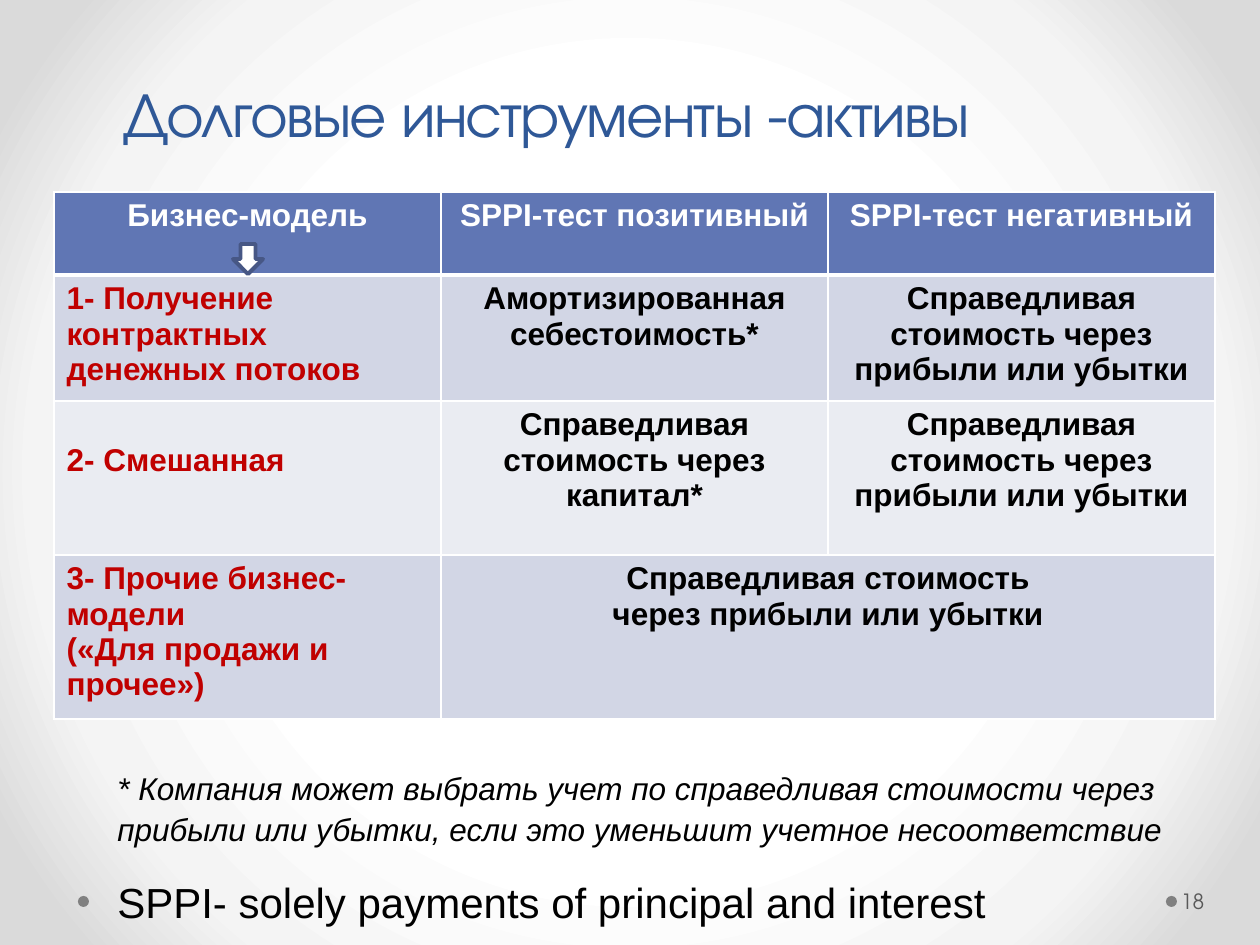
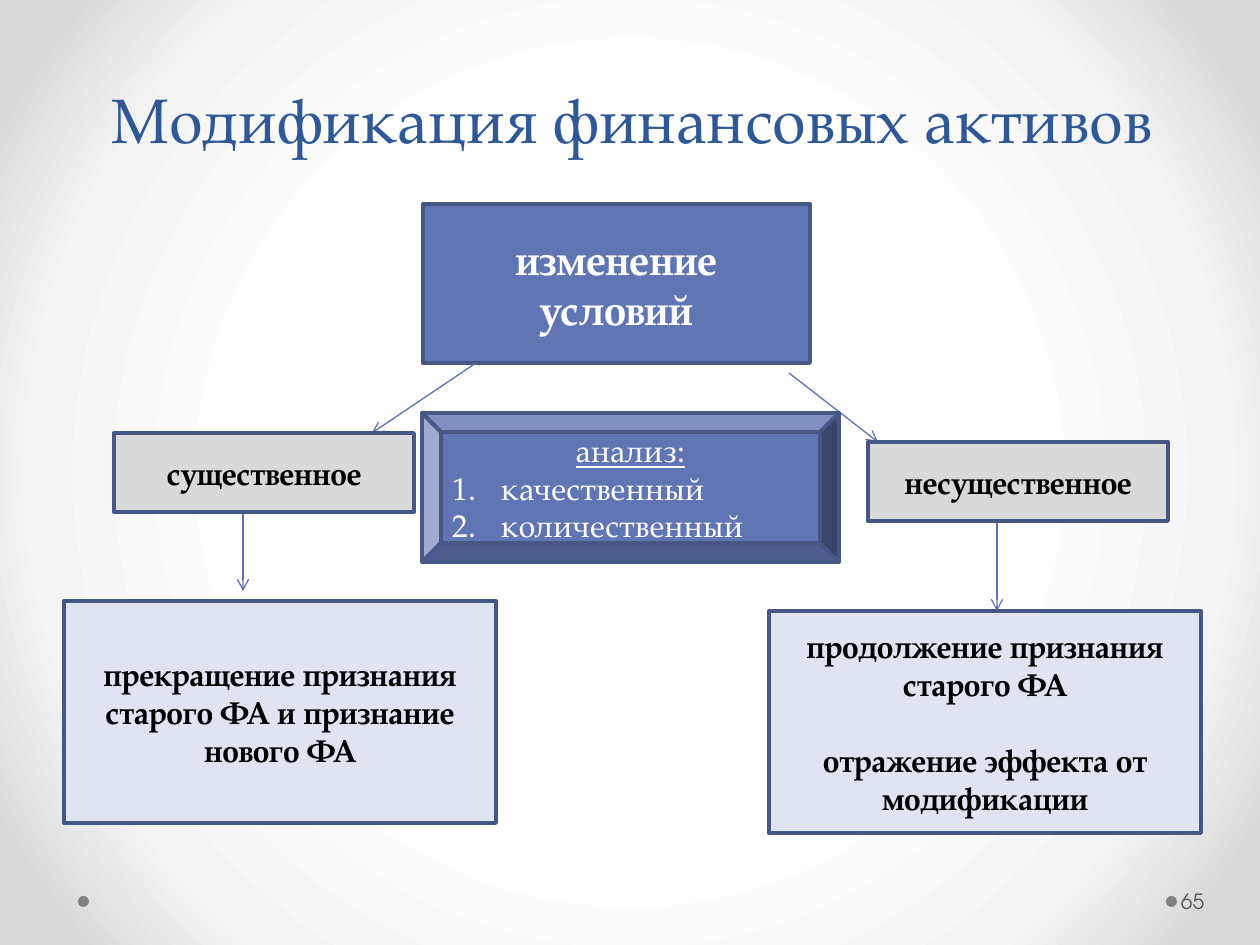
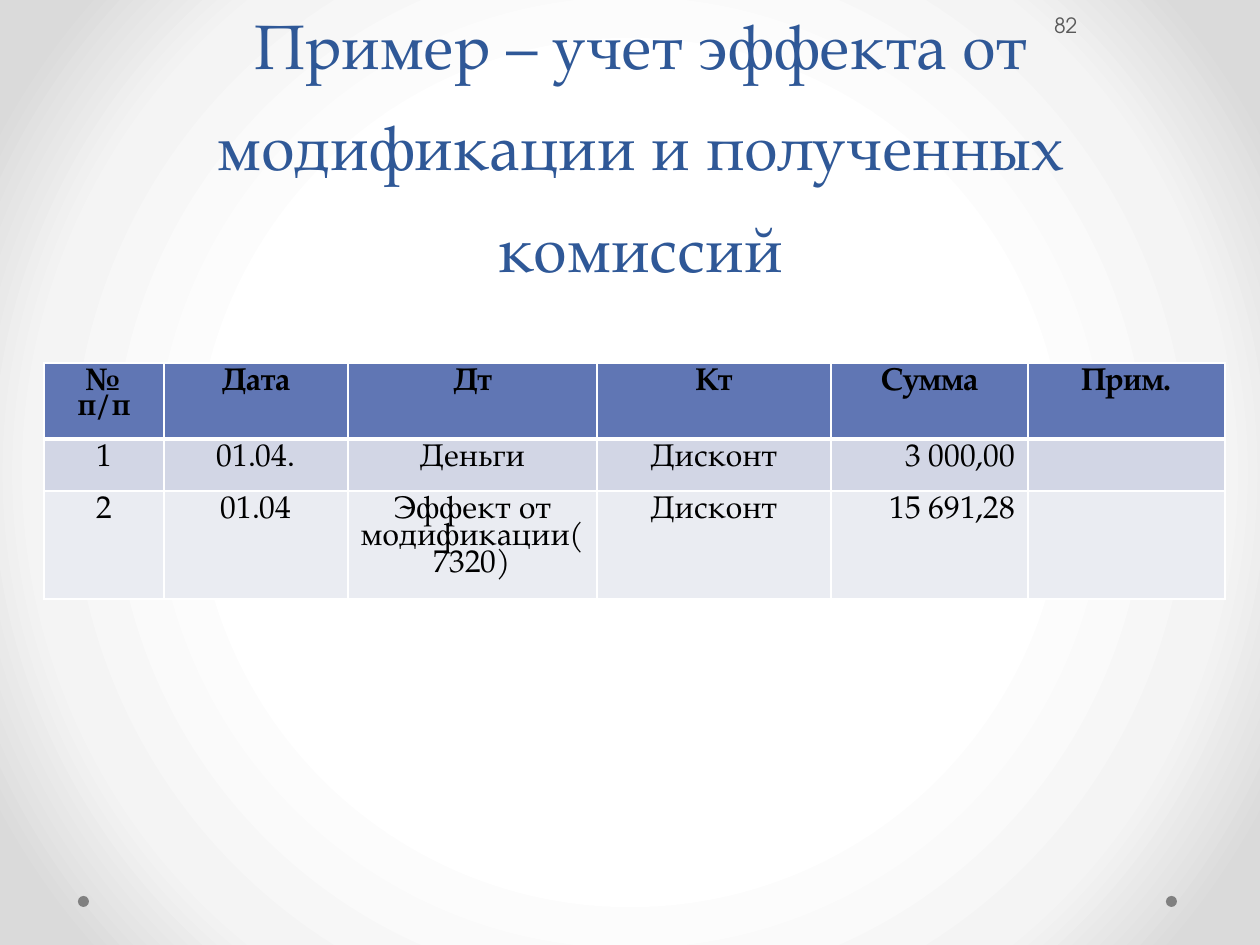
from dataclasses import dataclass, replace

from lxml import etree
from pptx import Presentation
from pptx import util as u
from pptx.dml.color import RGBColor
from pptx.enum import shapes, text
from pptx.oxml import parse_xml
from pptx.oxml.ns import nsdecls, qn

EMU_PER_PX = 914400 / 126

ADVENTOR, PAGELLA, ARIAL = "TeX Gyre Adventor", "TeX Gyre Pagella", "Arial"
WHITE, BLACK, RED = "FFFFFF", "000000", "C00000"
BLUE, EDGE, ARROW, TITLE = "6076B4", "475785", "5C72B2", "2F5897"
PALE_BLUE, PALE_GRAY, DOT, NUMBER = "DFE4F0", "D9D9D9", "808080", "595959"
BANDS = ("D2D6E5", "EAECF2")
BACKGROUND_STOPS = ((50, "FFFFFF"), (76, "F4F4F4"), (92, "DADADA"))

LEFT, CENTER, RIGHT = text.PP_ALIGN.LEFT, text.PP_ALIGN.CENTER, text.PP_ALIGN.RIGHT
TOP, MIDDLE, BOTTOM = (text.MSO_ANCHOR.TOP, text.MSO_ANCHOR.MIDDLE,
                       text.MSO_ANCHOR.BOTTOM)
SHAPE = shapes.MSO_SHAPE


def px(length):
    return u.Emu(round(length * EMU_PER_PX))


def colour(value):
    return RGBColor.from_string(value)


@dataclass(frozen=True)
class Look:
    """How a piece of text is set."""
    font: str = PAGELLA
    size: int = 18
    colour: str = BLACK
    bold: bool = False
    italic: bool = False
    align: int = CENTER
    spacing: object = None
    gap: int = 0


BOLD = Look(bold=True)
TITLE_LOOK = Look(size=36, colour=TITLE, spacing=u.Pt(58))
NUMBER_LOOK = Look(ADVENTOR, 12, NUMBER, align=LEFT)


class Slides:
    """Holds the deck, its shared style and the slide being filled."""

    def __init__(self):
        self.deck = Presentation()
        self.deck.slide_width, self.deck.slide_height = px(1260), px(945)
        self.page = None
        self.set_background()

    def set_background(self):
        master = self.deck.slide_master
        master.background.fill.solid()
        stops = "".join(
            f'<a:gs pos="{place * 1000}"><a:srgbClr val="{value}"/></a:gs>'
            for place, value in BACKGROUND_STOPS)
        gradient = parse_xml(
            f'<a:gradFill {nsdecls("a")} rotWithShape="1"><a:gsLst>{stops}</a:gsLst>'
            '<a:path path="circle"><a:fillToRect l="50000" t="50000" r="50000" '
            'b="50000"/></a:path></a:gradFill>')
        properties = master.element.xpath("//p:bgPr")[0]
        properties.replace(properties[0], gradient)

    def start(self, title, title_at, number, number_at=(1177, 876, 77, 50),
              look=TITLE_LOOK, anchor=BOTTOM):
        """Add a page with its title, corner dots and page number."""
        self.page = self.deck.slides.add_slide(self.deck.slide_layouts[5])
        for left in (1166, 78):
            self.shape(SHAPE.OVAL, (left, 896, 11, 11), DOT)
        box = self.page.shapes.title
        box.left, box.top, box.width, box.height = map(px, title_at)
        self.set_text(box.text_frame, title, look, anchor)
        box.text_frame.auto_size = text.MSO_AUTO_SIZE.NONE
        frame = self.textbox(number_at, number, NUMBER_LOOK, MIDDLE)
        frame.margin_left = px(4)

    def set_text(self, frame, words, look, anchor=TOP):
        frame.word_wrap = True
        frame.vertical_anchor = anchor
        frame.text = words
        for index, paragraph in enumerate(frame.paragraphs):
            self.style(paragraph, look)
            if index and look.gap:
                paragraph.space_before = u.Pt(look.gap)

    def style(self, paragraph, look):
        paragraph.alignment = look.align
        if look.spacing:
            paragraph.line_spacing = look.spacing
        font = paragraph.font
        font.name, font.size = look.font, u.Pt(look.size)
        font.bold, font.italic = look.bold, look.italic
        font.color.rgb = colour(look.colour)

    def textbox(self, at, words, look, anchor=TOP):
        frame = self.page.shapes.add_textbox(*map(px, at)).text_frame
        self.set_text(frame, words, look, anchor)
        return frame

    def shape(self, kind, at, fill, edge=None, words="", look=BOLD):
        box = self.page.shapes.add_shape(kind, *map(px, at))
        box.shadow.inherit = False
        box.fill.solid()
        box.fill.fore_color.rgb = colour(fill)
        if edge:
            box.line.color.rgb = colour(edge)
            box.line.width = u.Pt(2.25)
        else:
            box.line.fill.background()
        if words:
            self.set_text(box.text_frame, words, look, MIDDLE)
        return box.text_frame

    def arrow(self, *ends):
        line = self.page.shapes.add_connector(
            shapes.MSO_CONNECTOR.STRAIGHT, *map(px, ends))
        line.line.color.rgb = colour(ARROW)
        line.line.width = u.Pt(0.75)
        etree.SubElement(line.get_or_add_ln(), qn("a:tailEnd"), type="arrow")
        etree.SubElement(line.element.spPr, qn("a:effectLst"))

    def number_list(self, paragraphs):
        for paragraph in paragraphs:
            paragraph.alignment = LEFT
            properties = paragraph._p.get_or_add_pPr()
            properties.set("marL", str(px(48)))
            properties.set("indent", str(-px(48)))
            etree.SubElement(properties, qn("a:buAutoNum"), type="arabicPeriod")
            # The schema puts bullets ahead of the default run properties.
            properties.append(properties.find(qn("a:defRPr")))

    def table(self, corner, widths, heights, rows, header, columns):
        """Fill a table; columns holds the look of each column's body cells."""
        frame = self.page.shapes.add_table(
            len(rows), len(widths), *map(px, (*corner, sum(widths), sum(heights))))
        grid = frame.table
        grid.horz_banding = False
        for column, width in zip(grid.columns, widths):
            column.width = px(width)
        for row, height in zip(grid.rows, heights):
            row.height = px(height)
        for y, row in enumerate(rows):
            for x, words in enumerate(row):
                cell = grid.cell(y, x)
                self.borders(cell, top=3 if y == 1 else 1, bottom=1 if y else 3)
                cell.fill.solid()
                cell.fill.fore_color.rgb = colour(BANDS[(y - 1) % 2] if y else BLUE)
                if words:
                    self.fill_cell(cell, words, columns[x] if y else header)
        return grid

    def fill_cell(self, cell, words, look):
        cell.text = words
        for paragraph in cell.text_frame.paragraphs:
            self.style(paragraph, look)

    def borders(self, cell, top, bottom):
        properties = cell._tc.get_or_add_tcPr()
        for side, width in (("L", 1), ("R", 1), ("T", top), ("B", bottom)):
            properties.append(parse_xml(
                f'<a:ln{side} {nsdecls("a")} w="{u.Pt(width)}"><a:solidFill>'
                f'<a:srgbClr val="{WHITE}"/></a:solidFill></a:ln{side}>'))


def debt_instruments(slides):
    slides.start("Долговые инструменты -активы", (111, 68, 1095, 89), "18",
                 look=Look(ADVENTOR, 36, TITLE, align=LEFT), anchor=TOP)
    for span in slides.page.shapes.title.text_frame.paragraphs[0].runs:
        span._r.get_or_add_rPr().set("spc", "-100")

    body = Look(ARIAL, bold=True)
    model = replace(body, colour=RED, align=LEFT)
    profit_or_loss = "Справедливая стоимость через прибыли или убытки"
    grid = slides.table(
        (54, 192), [387] * 3, (83, 119, 154, 153),
        [("Бизнес-модель", "SPPI-тест позитивный", "SPPI-тест негативный"),
         ("1- Получение контрактных денежных потоков",
          "Амортизированная себестоимость*", profit_or_loss),
         ("2- Смешанная", "Справедливая стоимость через капитал*", profit_or_loss),
         ("3- Прочие бизнес-модели\n(«Для продажи и прочее»)",
          "Справедливая стоимость\nчерез прибыли или убытки", "")],
        replace(body, colour=WHITE), (model, body, body))
    grid.cell(3, 1).merge(grid.cell(3, 2))
    grid.cell(2, 0).margin_top = px(42)

    note = slides.textbox(
        (105, 760, 1071, 165),
        "* Компания может выбрать учет по справедливая стоимости через прибыли "
        "или убытки, если это уменьшит учетное несоответствие\n"
        "SPPI- solely payments of principal and interest",
        Look(ARIAL, italic=True, align=LEFT, spacing=1.08, gap=14))
    meaning = note.paragraphs[1].font
    meaning.size, meaning.italic = u.Pt(24), False
    slides.shape(SHAPE.DOWN_ARROW, (233, 244, 30, 30), WHITE, EDGE)


def asset_modification(slides):
    slides.start("Модификация финансовых активов", (44, 86, 1177, 76), "65")
    slides.shape(SHAPE.RECTANGLE, (423, 204, 387, 159), BLUE, EDGE,
                 "изменение условий", Look(size=24, colour=WHITE, bold=True))
    for ends in ((476, 363, 372, 433), (789, 373, 878, 442),
                 (243, 512, 243, 591), (997, 522, 997, 611)):
        slides.arrow(*ends)
    for left, top, words in ((114, 433, "существенное"),
                             (868, 442, "несущественное")):
        slides.shape(SHAPE.RECTANGLE, (left, top, 300, 79), PALE_GRAY, EDGE, words)
    for left, top, words in (
            (64, 601, "прекращение признания старого ФА и признание нового ФА"),
            (769, 611, "продолжение признания старого ФА\n"
                       "отражение эффекта от модификации")):
        slides.shape(SHAPE.RECTANGLE, (left, top, 432, 222), PALE_BLUE, EDGE,
                     words, replace(BOLD, gap=22))
    analysis = slides.shape(SHAPE.BEVEL, (422, 413, 417, 149), BLUE, EDGE,
                            "анализ:\nкачественный\nколичественный",
                            Look(colour=WHITE))
    heading, *kinds = analysis.paragraphs
    heading.font.underline = True
    slides.number_list(kinds)


def modification_example(slides):
    slides.start("Пример – учет эффекта от модификации и полученных комиссий",
                 (74, 155, 1134, 136), "82", (1050, 3, 147, 45))
    body = Look(spacing=0.84)
    slides.table(
        (44, 363), (120, 184, 249, 234, 197, 197), (74, 52, 108),
        [("№ п/п", "Дата", "Дт", "Кт", "Сумма", "Прим."),
         ("1", "01.04.", "Деньги", "Дисконт", "3 000,00", ""),
         ("2", "01.04", "Эффект от модификации(7320)", "Дисконт", "15 691,28", "")],
        replace(body, bold=True),
        [body] * 4 + [replace(body, align=RIGHT), body])


def main():
    slides = Slides()
    debt_instruments(slides)
    asset_modification(slides)
    modification_example(slides)
    slides.deck.save("out.pptx")


if __name__ == "__main__":
    main()
